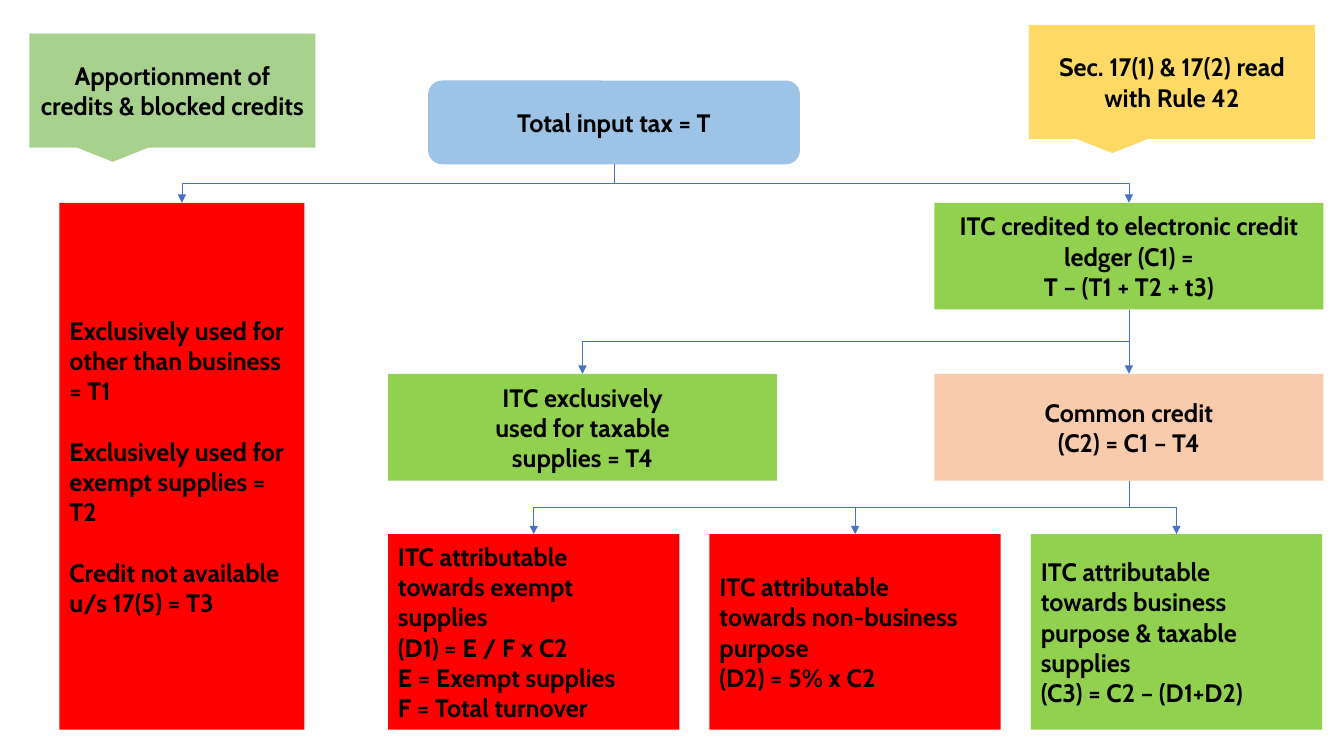
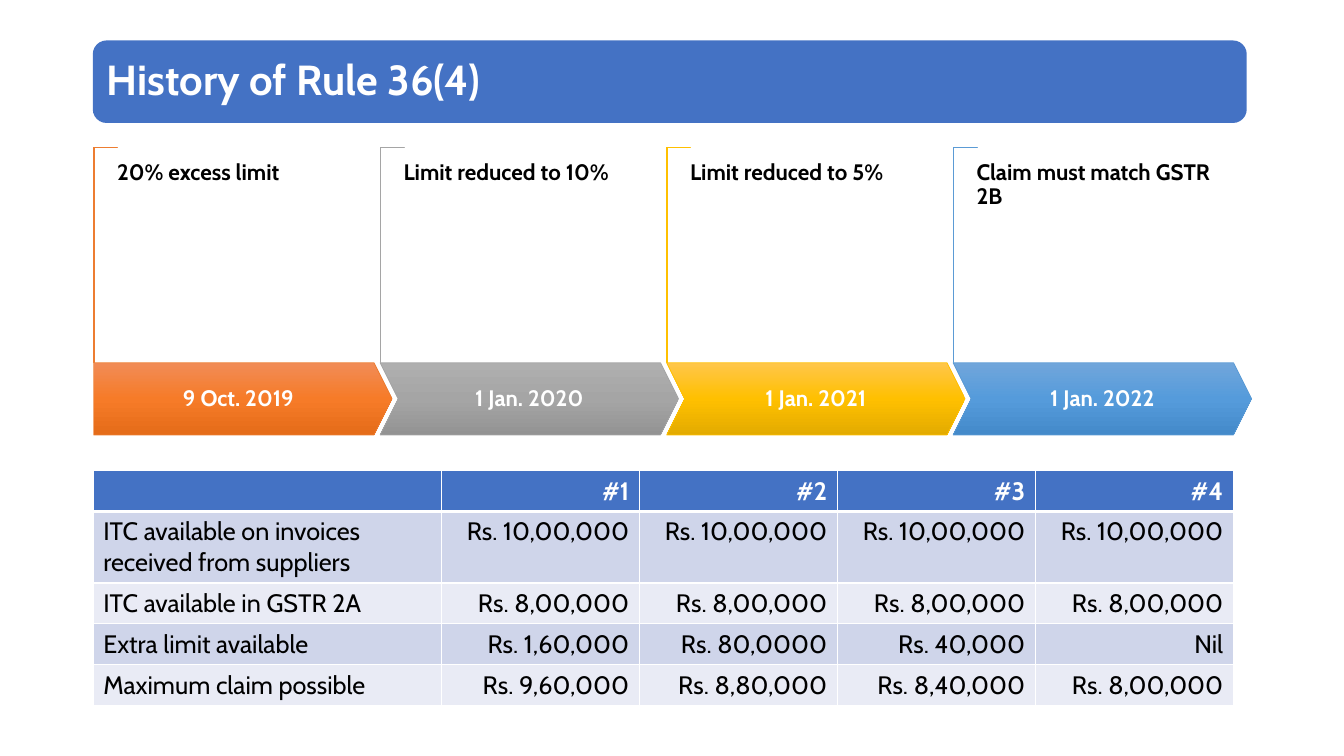
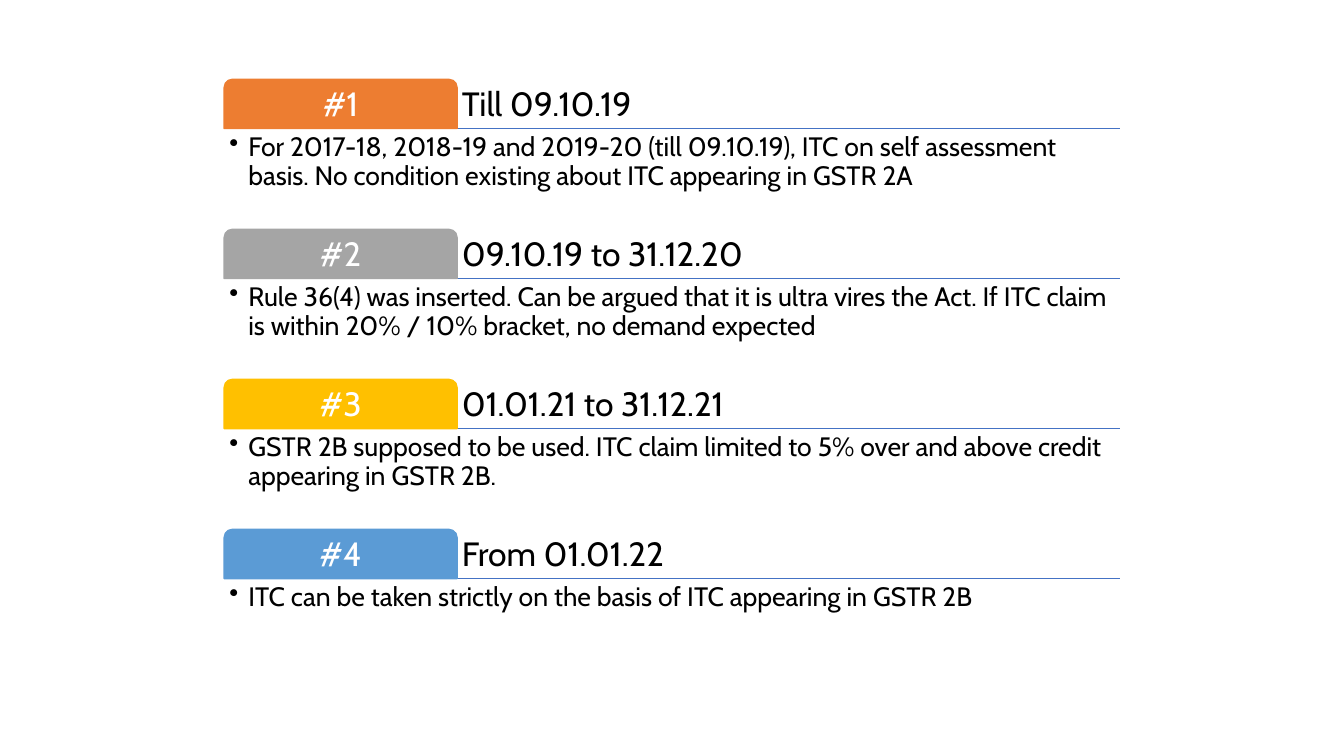
from copy import deepcopy
from dataclasses import dataclass

from lxml import etree
from pptx import Presentation
from pptx.dml.color import RGBColor
from pptx.enum.shapes import MSO_CONNECTOR, MSO_SHAPE
from pptx.enum.text import MSO_ANCHOR, PP_ALIGN
from pptx.oxml.ns import qn
from pptx.util import Cm, Pt

RECT = MSO_SHAPE.RECTANGLE
ROUNDED = MSO_SHAPE.ROUNDED_RECTANGLE
CALLOUT = MSO_SHAPE.RECTANGULAR_CALLOUT
TAB = MSO_SHAPE.ROUND_2_SAME_RECTANGLE
BRACKET = MSO_SHAPE.CORNER
PENTAGON = MSO_SHAPE.PENTAGON
CHEVRON = MSO_SHAPE.CHEVRON
STRAIGHT = MSO_CONNECTOR.STRAIGHT
ELBOW = MSO_CONNECTOR.ELBOW
LEFT, CENTER, RIGHT = PP_ALIGN.LEFT, PP_ALIGN.CENTER, PP_ALIGN.RIGHT
TOP, MIDDLE, BOTTOM = MSO_ANCHOR.TOP, MSO_ANCHOR.MIDDLE, MSO_ANCHOR.BOTTOM

FONT = "Cabin"
BLACK = RGBColor(0x00, 0x00, 0x00)
WHITE = RGBColor(0xFF, 0xFF, 0xFF)
BLUE = RGBColor(0x44, 0x72, 0xC4)
ORANGE = RGBColor(0xED, 0x7D, 0x31)
GREY = RGBColor(0xA5, 0xA5, 0xA5)
GOLD = RGBColor(0xFF, 0xC0, 0x00)
SKY = RGBColor(0x5B, 0x9B, 0xD5)
RED = RGBColor(0xFF, 0x00, 0x00)
GREEN = RGBColor(0x92, 0xD0, 0x50)
PALE_BLUE = RGBColor(0x9D, 0xC3, 0xE6)
PALE_GREEN = RGBColor(0xA9, 0xD1, 0x8E)
PALE_YELLOW = RGBColor(0xFF, 0xD9, 0x66)
PEACH = RGBColor(0xF8, 0xCB, 0xAD)
BAND_DARK = RGBColor(0xCF, 0xD5, 0xEA)
BAND_LIGHT = RGBColor(0xE9, 0xEB, 0xF5)


@dataclass
class Style:
    size: float = 18
    color: RGBColor = BLACK
    bold: bool = True
    align: PP_ALIGN = CENTER
    anchor: MSO_ANCHOR = MIDDLE
    spacing: float = 1.0
    gap: float = 0
    inset: float | None = None
    bullet: bool = False


@dataclass
class Node:
    key: str
    kind: MSO_SHAPE
    left: float
    top: float
    width: float
    height: float
    fill: RGBColor
    lines: list[str]
    style: Style


@dataclass
class Milestone:
    date: str
    note: str
    color: RGBColor
    shades: tuple[str, str, str]


@dataclass
class Period:
    dates: str
    advice: str
    color: RGBColor


# Shared drawing functions
def write(frame, lines: list[str], style: Style) -> None:
    frame.word_wrap = True
    frame.vertical_anchor = style.anchor
    if style.inset is not None:
        frame.margin_left = frame.margin_right = Cm(style.inset)
        frame.margin_top = frame.margin_bottom = Cm(style.inset)
    for index, line in enumerate(lines):
        para = frame.add_paragraph() if index else frame.paragraphs[0]
        para.alignment = style.align
        para.line_spacing = style.spacing
        if index and style.gap:
            para.space_before = Pt(style.gap)
        if style.bullet:
            props = para._p.get_or_add_pPr()
            props.set("marL", str(Cm(0.48)))
            props.set("indent", str(Cm(-0.48)))
            etree.SubElement(props, qn("a:buChar")).set("char", "•")
        run = para.add_run()
        run.text = line
        run.font.name = FONT
        run.font.size = Pt(style.size)
        run.font.bold = style.bold
        run.font.color.rgb = style.color


def add_box(slide, kind: MSO_SHAPE, left: float, top: float, width: float, height: float,
            fill: RGBColor, line: RGBColor | None = None, weight: float = 0.5):
    box = slide.shapes.add_shape(kind, Cm(left), Cm(top), Cm(width), Cm(height))
    box.shadow.inherit = False
    box.fill.solid()
    box.fill.fore_color.rgb = fill
    if line is None:
        box.line.fill.background()
    else:
        box.line.color.rgb = line
        box.line.width = Pt(weight)
    return box


def add_text(slide, left: float, top: float, width: float, height: float,
             text: str, style: Style) -> None:
    box = slide.shapes.add_textbox(Cm(left), Cm(top), Cm(width), Cm(height))
    write(box.text_frame, [text], style)


def add_line(slide, kind: MSO_CONNECTOR, x1: int, y1: int, x2: int, y2: int, weight: float):
    line = slide.shapes.add_connector(kind, x1, y1, x2, y2)
    line.line.color.rgb = BLUE
    line.line.width = Pt(weight)
    etree.SubElement(line._element.spPr, qn("a:effectLst"))
    return line


def add_branch(slide, parent, child) -> None:
    """Arrow from the bottom of the parent to the top of the child."""
    x1, y1 = parent.left + parent.width // 2, parent.top + parent.height
    x2, y2 = child.left + child.width // 2, child.top
    kind = STRAIGHT if x1 == x2 else ELBOW
    arrow = add_line(slide, kind, x1, y1, x2, y2, 0.5)
    arrow.begin_connect(parent, 2)
    arrow.end_connect(child, 0)
    etree.SubElement(arrow.line._get_or_add_ln(), qn("a:tailEnd")).set("type", "triangle")
    if kind == ELBOW:
        # Turn the elbow so that it leaves and arrives vertically
        drop, reach = y2 - y1, abs(x2 - x1)
        arrow.left, arrow.top = (x1 + x2 - drop) // 2, (y1 + y2 - reach) // 2
        arrow.width, arrow.height = drop, reach
        xfrm = arrow._element.spPr.find(qn("a:xfrm"))
        xfrm.set("rot", "5400000" if x2 < x1 else "16200000")
        xfrm.set("flipH", "0" if x2 < x1 else "1")
        xfrm.set("flipV", "0")


# Slide 1: apportionment tree
CENTRED = Style()
LISTED = Style(align=LEFT)
LEAF_LEFT, LEAF_PITCH, LEAF_TOP, LEAF_W, LEAF_H = 9.78, 8.1, 13.46, 7.34, 4.93
CREDIT_LEFT, CREDIT_W, CREDIT_H = 23.55, 9.8, 2.69

LEAVES = [
    ("D1", RED, ["ITC attributable", "towards exempt", "supplies", "(D1) = E / F x C2",
                 "E = Exempt supplies", "F = Total turnover"]),
    ("D2", RED, ["ITC attributable", "towards non-business", "purpose", "(D2) = 5% x C2"]),
    ("C3", GREEN, ["ITC attributable", "towards business", "purpose & taxable", "supplies",
                   "(C3) = C2 – (D1+D2)"]),
]
NODES = [
    Node("T", ROUNDED, 10.79, 2.03, 9.37, 2.11, PALE_BLUE, ["Total input tax = T"], CENTRED),
    Node("T1-T3", RECT, 1.5, 5.11, 6.17, 13.28, RED,
         ["Exclusively used for other than business = T1",
          "Exclusively used for exempt supplies = T2",
          "Credit not available u/s 17(5) = T3"], Style(align=LEFT, gap=21.6)),
    Node("C1", RECT, CREDIT_LEFT, 5.11, CREDIT_W, CREDIT_H, GREEN,
         ["ITC credited to electronic credit ledger (C1) =", "T – (T1 + T2 + t3)"], CENTRED),
    Node("T4", RECT, LEAF_LEFT, 9.42, CREDIT_W, CREDIT_H, GREEN,
         ["ITC exclusively", "used for taxable", "supplies = T4"], CENTRED),
    Node("C2", RECT, CREDIT_LEFT, 9.42, CREDIT_W, CREDIT_H, PEACH,
         ["Common credit", "(C2) = C1 – T4"], CENTRED),
    *(Node(key, RECT, LEAF_LEFT + i * LEAF_PITCH, LEAF_TOP, LEAF_W, LEAF_H, fill, lines, LISTED)
      for i, (key, fill, lines) in enumerate(LEAVES)),
    Node("topic", CALLOUT, 0.74, 0.85, 7.21, 2.87, PALE_GREEN,
         ["Apportionment of credits & blocked credits"], CENTRED),
    Node("law", CALLOUT, 25.93, 0.63, 7.21, 2.87, PALE_YELLOW,
         ["Sec. 17(1) & 17(2) read with Rule 42"], CENTRED),
]
BRANCHES = {"T": ["T1-T3", "C1"], "C1": ["T4", "C2"], "C2": ["D1", "D2", "C3"]}


def draw_apportionment(slide) -> None:
    boxes = {}
    for node in NODES:
        box = add_box(slide, node.kind, node.left, node.top, node.width, node.height, node.fill)
        write(box.text_frame, node.lines, node.style)
        boxes[node.key] = box
    for parent, children in BRANCHES.items():
        for child in children:
            add_branch(slide, boxes[parent], boxes[child])


# Slide 2: timeline and table
MILESTONES = [
    Milestone("9 Oct. 2019", "20% excess limit", ORANGE, ("F18C57", "F67B28", "E56C19")),
    Milestone("1 Jan. 2020", "Limit reduced to 10%", GREY, ("AFAFAF", "A5A5A5", "939393")),
    Milestone("1 Jan. 2021", "Limit reduced to 5%", GOLD, ("FFC64B", "FFC000", "E3AB00")),
    Milestone("1 Jan. 2022", "Claim must match GSTR 2B", SKY, ("71A6DB", "559BDB", "448ACA")),
]
CLAIMS = [
    ["", "#1", "#2", "#3", "#4"],
    ["ITC available on invoices received from suppliers"] + ["Rs. 10,00,000"] * 4,
    ["ITC available in GSTR 2A"] + ["Rs. 8,00,000"] * 4,
    ["Extra limit available", "Rs. 1,60,000", "Rs. 80,0000", "Rs. 40,000", "Nil"],
    ["Maximum claim possible", "Rs. 9,60,000", "Rs. 8,80,000", "Rs. 8,40,000", "Rs. 8,00,000"],
]
COLUMN_WIDTHS = [8.77] + [4.99] * 4
ROW_HEIGHTS = [1.03, 1.8, 1.03, 1.03, 1.03]


def shade(shape, shades: tuple[str, str, str]) -> None:
    """Three-stop gradient from top to bottom."""
    shape.fill.gradient()
    shape.fill.gradient_angle = 270
    stops = shape._element.spPr.find(".//" + qn("a:gsLst"))
    stops.append(deepcopy(stops[-1]))
    for index, (stop, value) in enumerate(zip(shape.fill.gradient_stops, shades)):
        stop.position = index / 2
        stop.color.rgb = RGBColor.from_string(value)


def draw_milestone(slide, index: int, milestone: Milestone) -> None:
    left, arrow_top, arrow_height = 2.36 + index * 7.22, 9.14, 1.82
    # Bracket, drawn lying down and turned upright
    length, depth, bracket_top = 5.43, 0.61, 3.71
    bracket = add_box(slide, BRACKET, left + (depth - length) / 2,
                      bracket_top + (length - depth) / 2, length, depth, WHITE, milestone.color)
    bracket.adjustments[0] = bracket.adjustments[1] = 0.01
    bracket.rotation = 90
    # Date arrow
    arrow = add_box(slide, CHEVRON if index else PENTAGON, left, arrow_top, 7.52, arrow_height,
                    milestone.color, milestone.color)
    arrow.adjustments[0] = 0.25
    shade(arrow, milestone.shades)
    write(arrow.text_frame, [milestone.date], Style(16, WHITE, spacing=0.9, inset=0))
    add_text(slide, left + 0.59, 4.06, 6.1, 3.68, milestone.note,
             Style(16, align=LEFT, anchor=TOP, spacing=0.9, inset=0))


def set_borders(cell, bottom_weight: float) -> None:
    props = cell._tc.get_or_add_tcPr()
    for side, weight in (("L", 1), ("R", 1), ("T", 1), ("B", bottom_weight)):
        edge = etree.SubElement(props, qn(f"a:ln{side}"))
        edge.set("w", str(Pt(weight)))
        fill = etree.SubElement(edge, qn("a:solidFill"))
        etree.SubElement(fill, qn("a:srgbClr")).set("val", str(WHITE))


def draw_claims(slide) -> None:
    table = slide.shapes.add_table(len(CLAIMS), len(COLUMN_WIDTHS), Cm(2.35), Cm(11.86),
                                   Cm(sum(COLUMN_WIDTHS)), Cm(sum(ROW_HEIGHTS))).table
    for column, width in zip(table.columns, COLUMN_WIDTHS):
        column.width = Cm(width)
    for r, (values, height) in enumerate(zip(CLAIMS, ROW_HEIGHTS)):
        table.rows[r].height = Cm(height)
        header = r == 0
        band = BLUE if header else BAND_DARK if r % 2 else BAND_LIGHT
        for c, value in enumerate(values):
            cell = table.cell(r, c)
            set_borders(cell, 3 if header else 1)
            cell.fill.solid()
            cell.fill.fore_color.rgb = band
            if value:
                write(cell.text_frame, [value],
                      Style(color=WHITE if header else BLACK, bold=header,
                            align=RIGHT if c else LEFT, anchor=TOP))


def draw_history(slide) -> None:
    title = add_box(slide, ROUNDED, 2.34, 1.02, 29.08, 2.08, BLUE)
    write(title.text_frame, ["History of Rule 36(4)"], Style(30, WHITE, align=LEFT, spacing=0.9))
    for index, milestone in enumerate(MILESTONES):
        draw_milestone(slide, index, milestone)
    draw_claims(slide)


# Slide 3: position in each period
PERIODS = [
    Period("Till 09.10.19", "For 2017-18, 2018-19 and 2019-20 (till 09.10.19), ITC on self "
           "assessment basis. No condition existing about ITC appearing in GSTR 2A", ORANGE),
    Period("09.10.19 to 31.12.20", "Rule 36(4) was inserted. Can be argued that it is ultra "
           "vires the Act. If ITC claim is within 20% / 10% bracket, no demand expected", GREY),
    Period("01.01.21 to 31.12.21", "GSTR 2B supposed to be used. ITC claim limited to 5% over "
           "and above credit appearing in GSTR 2B.", GOLD),
    Period("From 01.01.22", "ITC can be taken strictly on the basis of ITC appearing in GSTR 2B",
           SKY),
]


def draw_periods(slide) -> None:
    left, width, tab_width, tab_height = 5.65, 22.58, 5.87, 1.24
    for index, period in enumerate(PERIODS):
        top = 2 + index * 3.78
        rule = top + tab_height
        add_line(slide, STRAIGHT, Cm(left), Cm(rule), Cm(left + width), Cm(rule), 1)
        add_text(slide, left + tab_width, top, width - tab_width, tab_height, period.dates,
                 Style(24, bold=False, align=LEFT, anchor=BOTTOM, spacing=0.9, inset=0.12))
        tab = add_box(slide, TAB, left, top, tab_width, tab_height, period.color, period.color, 1)
        write(tab.text_frame, [f"#{index + 1}"],
              Style(24, WHITE, bold=False, spacing=0.9, inset=0.12))
        add_text(slide, left, rule, width, 2.49, period.advice,
                 Style(19, bold=False, align=LEFT, anchor=TOP, spacing=0.9, inset=0.13,
                       bullet=True))


def main() -> None:
    deck = Presentation()
    deck.slide_width, deck.slide_height = Cm(33.87), Cm(19.05)
    for draw in (draw_apportionment, draw_history, draw_periods):
        draw(deck.slides.add_slide(deck.slide_layouts[6]))
    deck.save("out.pptx")


if __name__ == "__main__":
    main()
